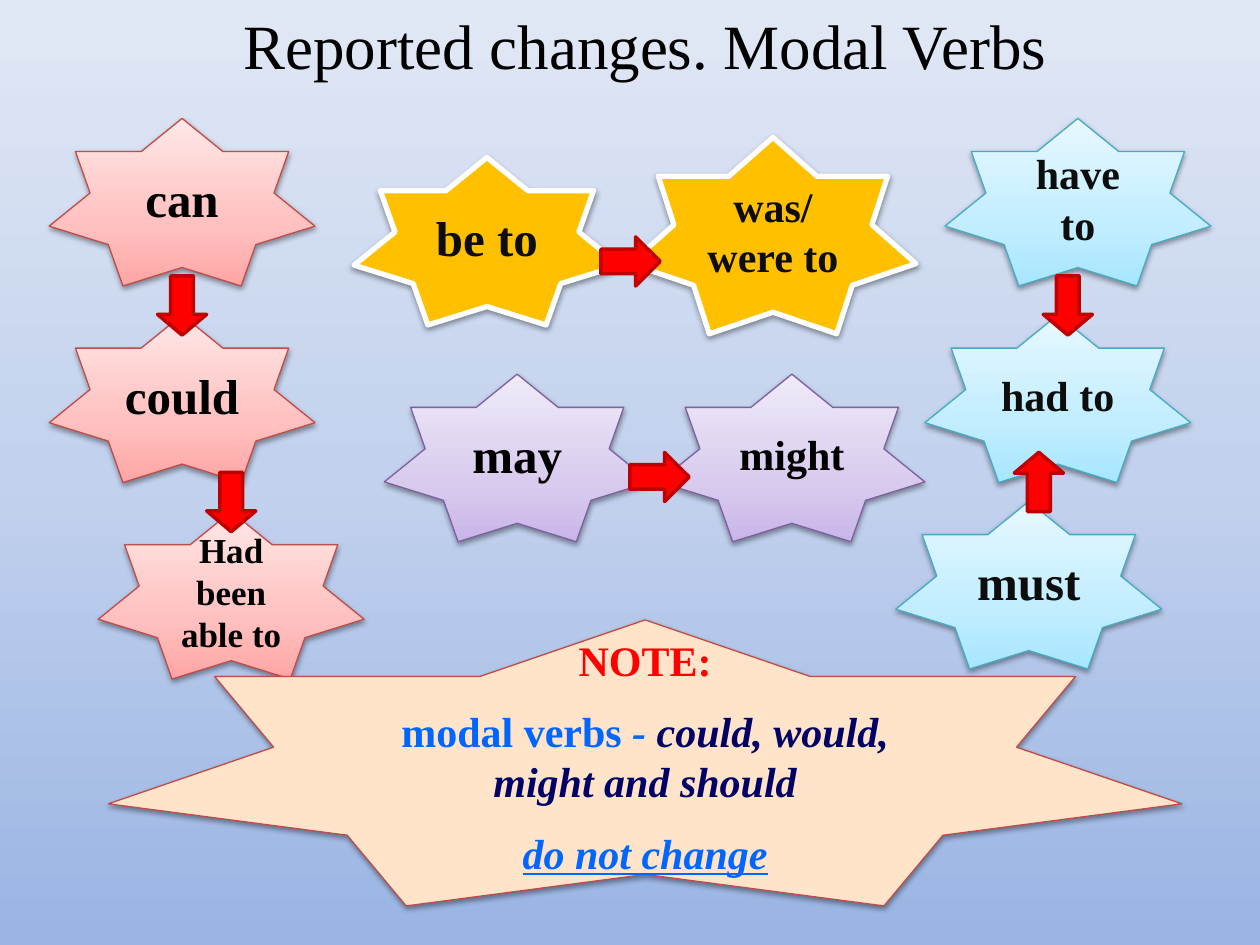
from copy import deepcopy
from dataclasses import dataclass

from lxml import etree
from pptx import Presentation
from pptx.dml.color import RGBColor
from pptx.dml.fill import FillFormat
from pptx.enum.shapes import MSO_SHAPE
from pptx.enum.text import MSO_ANCHOR, PP_ALIGN
from pptx.oxml.ns import qn
from pptx.shapes.autoshape import Shape
from pptx.slide import Slide
from pptx.text.text import Font
from pptx.util import Pt

PX = 9144  # EMU per px, 100 px to the inch
FACE = "Times New Roman"
STAR = MSO_SHAPE.STAR_7_POINT
DOWN, UP, RIGHT = MSO_SHAPE.DOWN_ARROW, MSO_SHAPE.UP_ARROW, MSO_SHAPE.RIGHT_ARROW
CENTER, MIDDLE = PP_ALIGN.CENTER, MSO_ANCHOR.MIDDLE

BLACK = RGBColor(0x00, 0x00, 0x00)
INK = RGBColor(0x0D, 0x0D, 0x0D)
WHITE = RGBColor(0xFF, 0xFF, 0xFF)
RED = RGBColor(0xFF, 0x00, 0x00)
MAROON = RGBColor(0xC0, 0x00, 0x00)
BRICK = RGBColor(0xBF, 0x4C, 0x48)
VIOLET = RGBColor(0x7D, 0x60, 0xA0)
TEAL = RGBColor(0x46, 0xAA, 0xC5)
GOLD = RGBColor(0xFF, 0xC0, 0x00)
PEACH = RGBColor(0xFF, 0xE4, 0xC9)
BLUE = RGBColor(0x00, 0x66, 0xFF)
NAVY = RGBColor(0x00, 0x00, 0x66)
SKY = (RGBColor(0x9A, 0xB5, 0xE4), RGBColor(0xC2, 0xD1, 0xED), RGBColor(0xE1, 0xE8, 0xF5))
ROSE = (RGBColor(0xFF, 0xA6, 0xA5), RGBColor(0xFF, 0xC0, 0xBF), RGBColor(0xFF, 0xE7, 0xE7))
LILAC = (RGBColor(0xC9, 0xB5, 0xE8), RGBColor(0xD8, 0xCB, 0xEE), RGBColor(0xF0, 0xEA, 0xF9))
AQUA = (RGBColor(0xA7, 0xE6, 0xFF), RGBColor(0xC1, 0xED, 0xFF), RGBColor(0xE7, 0xF8, 0xFF))


@dataclass(frozen=True)
class Look:
    fill: RGBColor | tuple[RGBColor, ...]
    line: RGBColor
    width: float
    ink: RGBColor


@dataclass(frozen=True)
class Star:
    text: str
    x: int
    y: int
    look: Look
    size: int = 28
    w: int = 211
    h: int = 133


@dataclass(frozen=True)
class Arrow:
    kind: MSO_SHAPE
    x: int
    y: int


PINK = Look(ROSE, BRICK, 0.75, BLACK)
PLUM = Look(LILAC, VIOLET, 0.75, BLACK)
CYAN = Look(AQUA, TEAL, 0.75, INK)
AMBER = Look(GOLD, WHITE, 3, INK)
CREAM = Look(PEACH, BRICK, 0.75, RED)

STARS = [
    Star("can", 39, 94, PINK),
    Star("could", 39, 250, PINK),
    Star("Had been able to", 78, 406, PINK, 20),
    Star("might", 523, 297, PLUM, 24),
    Star("may", 305, 297, PLUM),
    Star("had to", 734, 250, CYAN, 24),
    Star("must", 711, 398, CYAN),
    Star("have to", 750, 94, CYAN, 24),
    Star("was/ were to", 500, 109, AMBER, 24, 227, 156),
    Star("be to", 281, 125, AMBER),
]
ARROWS = [
    Arrow(DOWN, 125, 219),
    Arrow(DOWN, 164, 375),
    Arrow(RIGHT, 477, 188),
    Arrow(RIGHT, 500, 359),
    Arrow(UP, 805, 359),
    Arrow(DOWN, 828, 219),
]
NOTE = Star("NOTE:", 86, 492, CREAM, 24, 852, 227)


def blend(fill: FillFormat, root: etree._Element, tones: tuple[RGBColor, ...], mid: float) -> None:
    """Fill with three tones from bottom to top."""
    fill.gradient()
    fill.gradient_angle = 90
    stops = root.find(".//" + qn("a:gsLst"))
    stops.insert(1, deepcopy(stops[0]))
    for stop, tone, spot in zip(fill.gradient_stops, tones, (0, mid, 1)):
        stop.color.rgb = tone
        stop.position = spot


def style(font: Font, size: int, ink: RGBColor, bold: bool = True) -> None:
    font.name, font.size, font.bold = FACE, Pt(size), bold
    font.color.rgb = ink


def add_shape(slide: Slide, kind: MSO_SHAPE, box: tuple[int, ...], line: RGBColor, width: float) -> Shape:
    shape = slide.shapes.add_shape(kind, *(n * PX for n in box))
    shape.shadow.inherit = False
    shape.line.color.rgb = line
    shape.line.width = Pt(width)
    return shape


def add_shadow(shape: Shape) -> None:
    glow = shape.element.find(".//" + qn("a:effectLst"))
    drop = etree.SubElement(glow, qn("a:outerShdw"), blurRad="40000", dist="20000",
                            dir="5400000", rotWithShape="0")
    tone = etree.SubElement(drop, qn("a:srgbClr"), val=str(BLACK))
    etree.SubElement(tone, qn("a:alpha"), val="38000")


def add_star(slide: Slide, star: Star) -> Shape:
    look = star.look
    shape = add_shape(slide, STAR, (star.x, star.y, star.w, star.h), look.line, look.width)
    if isinstance(look.fill, RGBColor):
        shape.fill.solid()
        shape.fill.fore_color.rgb = look.fill
    else:
        blend(shape.fill, shape.element, look.fill, 0.35)
    add_shadow(shape)
    frame = shape.text_frame
    frame.word_wrap = True
    frame.vertical_anchor = MIDDLE
    frame.text = star.text
    para = frame.paragraphs[0]
    para.alignment = CENTER
    style(para.font, star.size, look.ink)
    return shape


def add_arrow(slide: Slide, arrow: Arrow) -> None:
    flat = arrow.kind == RIGHT
    w, h = (47, 39) if flat else (39, 47)
    shape = add_shape(slide, arrow.kind, (arrow.x, arrow.y, w, h), MAROON, 2)
    shape.fill.solid()
    shape.fill.fore_color.rgb = RED
    if not flat:
        shape.adjustments[0], shape.adjustments[1] = 0.465, 0.422


def add_note(slide: Slide) -> None:
    frame = add_star(slide, NOTE).text_frame
    rule, end = frame.add_paragraph(), frame.add_paragraph()
    for para in frame.paragraphs:
        para.alignment = CENTER
        para.space_before = Pt(12)
    style(rule.font, NOTE.size, BLUE)
    style(end.font, NOTE.size, BLUE)
    for text, ink, slant in (
        ("modal verbs", BLUE, False),
        (" - ", BLUE, True),
        ("could, would, might and should", NAVY, True),
    ):
        run = rule.add_run()
        run.text = text
        run.font.color.rgb = ink
        run.font.italic = slant
    end.add_run().text = "do not change"
    end.font.italic = end.font.underline = True


def add_title(slide: Slide) -> None:
    title = slide.shapes.title
    title.left, title.top, title.width, title.height = (n * PX for n in (172, 0, 680, 70))
    frame = title.text_frame
    frame.text = "Reported changes. Modal Verbs"
    frame.vertical_anchor = MIDDLE
    para = frame.paragraphs[0]
    para.alignment = CENTER
    style(para.font, 36, BLACK, False)


def main() -> None:
    deck = Presentation()
    deck.slide_width, deck.slide_height = 1000 * PX, 750 * PX
    slide = deck.slides.add_slide(deck.slide_layouts[5])
    blend(slide.background.fill, slide.element, SKY, 0.5)
    add_title(slide)
    for star in STARS:
        add_star(slide, star)
    for arrow in ARROWS:
        add_arrow(slide, arrow)
    add_note(slide)
    deck.save("out.pptx")


if __name__ == "__main__":
    main()
